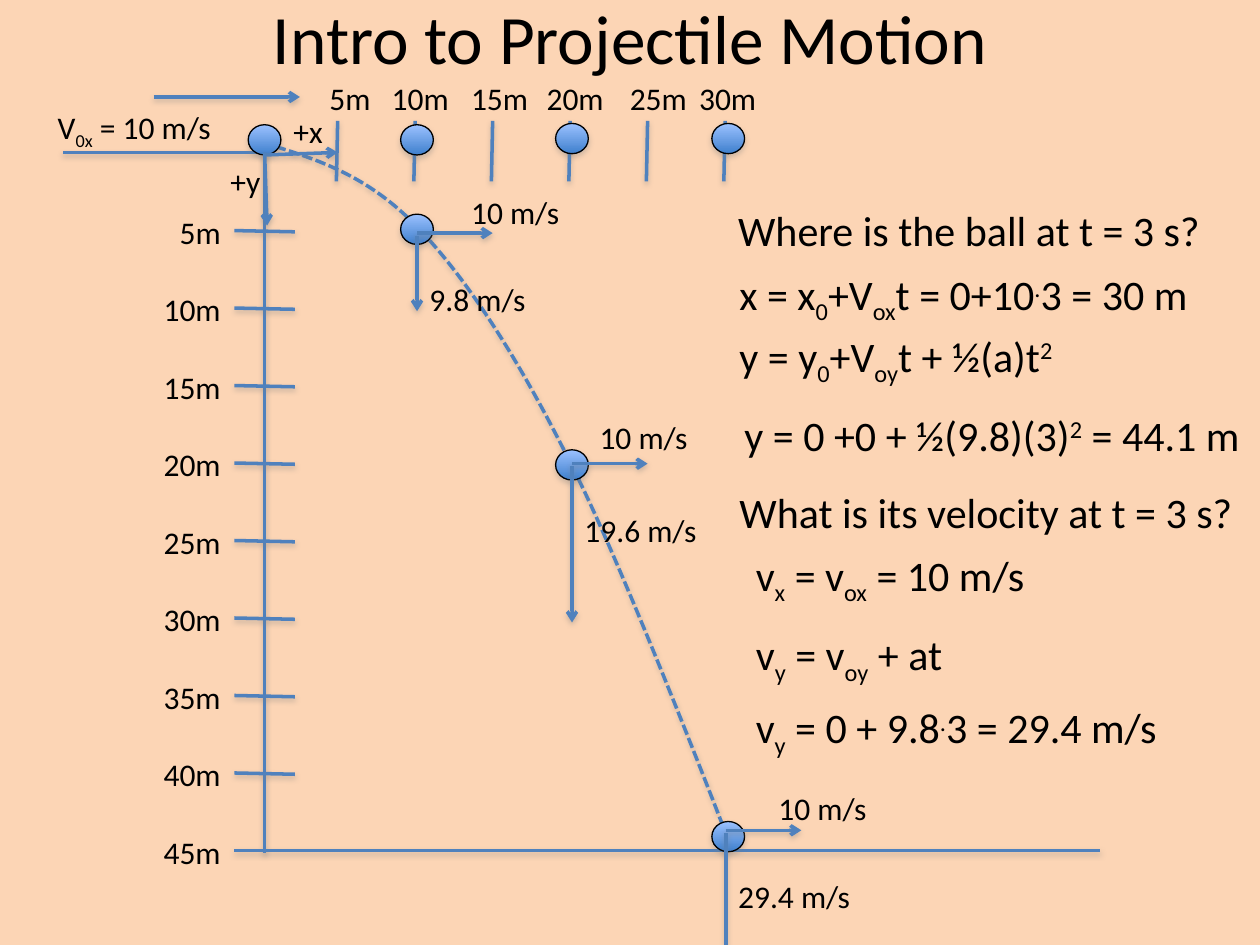
"""Build a slide that introduces projectile motion with a labelled trajectory and worked equations."""
from dataclasses import dataclass
from typing import Any

from lxml.etree import SubElement
from pptx import Presentation
from pptx.dml.color import RGBColor
from pptx.enum.dml import MSO_LINE
from pptx.enum.shapes import MSO_CONNECTOR, MSO_SHAPE
from pptx.enum.text import MSO_ANCHOR, MSO_AUTO_SIZE as AutoSize, PP_ALIGN as Align
from pptx.oxml.ns import qn
from pptx.util import Inches, Pt


@dataclass(frozen=True)
class Theme:
    font: str = "Calibri"
    background: RGBColor = RGBColor(0xFC, 0xD5, 0xB5)
    ink: RGBColor = RGBColor(0, 0, 0)
    stroke: RGBColor = RGBColor(0x4F, 0x81, 0xBD)
    ball_top: RGBColor = RGBColor(0x9B, 0xC1, 0xFF)
    ball_bottom: RGBColor = RGBColor(0x3F, 0x80, 0xCD)
    shadow: str = "808080"
    title_size: float = 39.6
    equation_size: float = 24
    label_size: float = 18
    stroke_width: float = 2
    outline_width: float = 0.75


@dataclass(frozen=True)
class Label:
    text: str
    left: float
    top: float
    width: float
    height: float = 0.4
    size: float = Theme.label_size
    align: Any = None


@dataclass(frozen=True)
class Stroke:
    x1: float
    y1: float
    x2: float
    y2: float
    arrow: bool = False


@dataclass(frozen=True)
class Velocity:
    x: float
    y: float
    tip_y: float
    speed: str
    across_left: float
    across_top: float
    down_top: float


THEME = Theme()
STEP = 0.615
BALL_WIDTH, BALL_HEIGHT = 0.26, 0.24
SCRIPT_SHIFT = {"_": "-25000", "^": "30000"}

TRAJECTORY_START = (2.08, 1.13)
TRAJECTORY_CURVE = [
    (2.5, 1.26), (2.91, 1.38), (3.32, 1.81),
    (3.73, 2.24), (4.14, 2.89), (4.54, 3.7),
    (4.95, 4.5), (5.77, 6.64), (5.77, 6.64),
]
AXES = [
    Stroke(0.5, 1.21, 2.1, 1.21),
    Stroke(2.1, 1.21, 2.1, 6.77),
    Stroke(1.86, 6.75, 8.73, 6.75),
]
DIRECTIONS = [
    Stroke(1.22, 0.77, 2.38, 0.77, True),
    Stroke(2.1, 1.23, 2.68, 1.21, True),
    Stroke(2.1, 1.21, 2.12, 1.79, True),
]
DIRECTION_LABELS = [
    Label("V|_0x| = 10 m/s", 0.36, 0.81, 1.49),
    Label("+x", 2.23, 0.84, 0.74),
    Label("+y", 1.73, 1.24, 0.74),
]
DISTANCE_LEFTS = [2.38, 3, 3.63, 4.23, 4.89, 5.44]
BALLS = [
    (3.18, 0.99), (4.41, 0.98), (5.65, 0.98),
    (3.18, 1.7), (4.41, 3.57), (5.65, 6.52), (1.97, 0.99),
]
VELOCITIES = [
    Velocity(3.31, 1.85, 2.47, "9.8 m/s", 3.64, 1.48, 2.17),
    Velocity(4.54, 3.68, 4.94, "19.6 m/s", 4.66, 3.27, 4.01),
    Velocity(5.76, 6.59, 8.68, "29.4 m/s", 6.08, 6.21, 6.91),
]
EQUATIONS = [
    Label(text, left, top, width, 0.51, THEME.equation_size)
    for text, left, top, width in [
        ("Where is the ball at t = 3 s?", 5.76, 1.57, 4.23),
        ("x = x|_0|+V|_ox|t = 0+10|^.|3 = 30 m", 5.77, 2.08, 3.92),
        ("y = y|_0|+V|_oy|t + ½(a)t|^2", 5.77, 2.57, 2.95),
        ("y = 0 +0 + ½(9.8)(3)|^2| = 44.1 m", 5.81, 3.2, 4.21),
        ("What is its velocity at t = 3 s?", 5.77, 3.81, 4.21),
        ("v|_x| = v|_ox| = 10 m/s", 5.9, 4.31, 2.53),
        ("v|_y| = v|_oy| + at", 5.9, 4.94, 1.98),
        ("v|_y| = 0 + 9.8|^.|3 = 29.4 m/s", 5.9, 5.52, 3.67),
    ]
]


def add_shadow(shape: Any, opacity: int, distance: float) -> None:
    effects = SubElement(shape.element.spPr, qn("a:effectLst"))
    shadow = SubElement(effects, qn("a:outerShdw"), blurRad=str(Pt(3.1)),
                        dist=str(Pt(distance)), dir="5400000", rotWithShape="0")
    color = SubElement(shadow, qn("a:srgbClr"), val=THEME.shadow)
    SubElement(color, qn("a:alpha"), val=str(opacity * 1000))


def style_line(line: Any, color: RGBColor, width: float) -> None:
    line.color.rgb = color
    line.width = Pt(width)


def style_font(font: Any, size: float) -> None:
    font.name = THEME.font
    font.size = Pt(size)
    font.color.rgb = THEME.ink


def draw_stroke(shapes: Any, stroke: Stroke) -> None:
    ends = map(Inches, (stroke.x1, stroke.y1, stroke.x2, stroke.y2))
    connector = shapes.add_connector(MSO_CONNECTOR.STRAIGHT, *ends)
    style_line(connector.line, THEME.stroke, THEME.stroke_width)
    if stroke.arrow:
        SubElement(connector.element.spPr.find(qn("a:ln")), qn("a:tailEnd"), type="arrow")
    add_shadow(connector, 38, 1.6)


def draw_label(shapes: Any, label: Label) -> None:
    box = map(Inches, (label.left, label.top, label.width, label.height))
    frame = shapes.add_textbox(*box).text_frame
    frame.word_wrap = True
    frame.auto_size = AutoSize.SHAPE_TO_FIT_TEXT
    paragraph = frame.paragraphs[0]
    paragraph.alignment = label.align
    for part in label.text.split("|"):
        run = paragraph.add_run()
        run.text = part.lstrip("_^")
        style_font(run.font, label.size)
        if part[0] in SCRIPT_SHIFT:
            run._r.get_or_add_rPr().set("baseline", SCRIPT_SHIFT[part[0]])


def draw_ball(shapes: Any, left: float, top: float) -> None:
    box = map(Inches, (left, top, BALL_WIDTH, BALL_HEIGHT))
    ball = shapes.add_shape(MSO_SHAPE.OVAL, *box)
    ball.fill.gradient()
    ball.fill.gradient_angle = 270
    for stop, color in zip(ball.fill.gradient_stops, (THEME.ball_top, THEME.ball_bottom)):
        stop.color.rgb = color
    style_line(ball.line, THEME.ink, THEME.outline_width)
    add_shadow(ball, 35, 1.8)


def draw_trajectory(shapes: Any) -> None:
    builder = shapes.build_freeform(*map(Inches, TRAJECTORY_START))
    builder.add_line_segments([(Inches(x), Inches(y)) for x, y in TRAJECTORY_CURVE], close=False)
    trajectory = builder.convert_to_shape()
    outline = next(trajectory.element.iter(qn("a:path")))
    segments = outline.findall(qn("a:lnTo"))
    for first in range(0, len(segments), 3):
        bezier = SubElement(outline, qn("a:cubicBezTo"))
        for segment in segments[first:first + 3]:
            bezier.append(segment[0])
            outline.remove(segment)
    trajectory.fill.background()
    style_line(trajectory.line, THEME.stroke, THEME.stroke_width)
    trajectory.line.dash_style = MSO_LINE.SQUARE_DOT
    add_shadow(trajectory, 38, 1.6)


def draw_scales(shapes: Any) -> None:
    for index in range(9):
        offset = index * STEP
        draw_label(shapes, Label(f"{5 * (index + 1)}m", 1.19, 1.64 + offset, 0.66, align=Align.RIGHT))
        if index < 8:
            draw_stroke(shapes, Stroke(1.86, 1.83 + offset, 2.34, 1.84 + offset))
    distance_ticks = shapes.add_group_shape().shapes
    for index, left in enumerate(DISTANCE_LEFTS):
        x = 2.68 + index * STEP
        draw_stroke(distance_ticks, Stroke(x, 0.96, x - 0.01, 1.44))
        draw_label(shapes, Label(f"{5 * (index + 1)}m", left, 0.58, 0.66, align=Align.RIGHT))


def draw_velocity(shapes: Any, velocity: Velocity) -> None:
    group = shapes.add_group_shape().shapes
    x, y = velocity.x, velocity.y
    draw_stroke(group, Stroke(x, y, x + 0.6, y, True))
    draw_stroke(group, Stroke(x, y + 0.02, x, velocity.tip_y, True))
    draw_label(group, Label("10 m/s", velocity.across_left, velocity.across_top, 1.15))
    draw_label(group, Label(velocity.speed, x, velocity.down_top, 1.15))


def main() -> None:
    deck = Presentation()
    deck.slide_width, deck.slide_height = Inches(10), Inches(7.5)
    slide = deck.slides.add_slide(deck.slide_layouts[5])
    slide.background.fill.solid()
    slide.background.fill.fore_color.rgb = THEME.background
    title, shapes = slide.shapes.title, slide.shapes
    title.left, title.top, title.width, title.height = map(Inches, (0.5, 0, 9, 0.58))
    title.text_frame.text = "Intro to Projectile Motion"
    title.text_frame.vertical_anchor = MSO_ANCHOR.MIDDLE
    title.text_frame.auto_size = AutoSize.NONE
    title.text_frame.paragraphs[0].alignment = Align.CENTER
    style_font(title.text_frame.paragraphs[0].runs[0].font, THEME.title_size)
    draw_trajectory(shapes)
    for axis in AXES:
        draw_stroke(shapes, axis)
    draw_scales(shapes)
    for left, top in BALLS:
        draw_ball(shapes, left, top)
    for direction in DIRECTIONS:
        draw_stroke(shapes, direction)
    for velocity in VELOCITIES:
        draw_velocity(shapes, velocity)
    for label in DIRECTION_LABELS + EQUATIONS:
        draw_label(shapes, label)
    deck.save("out.pptx")


if __name__ == "__main__":
    main()
